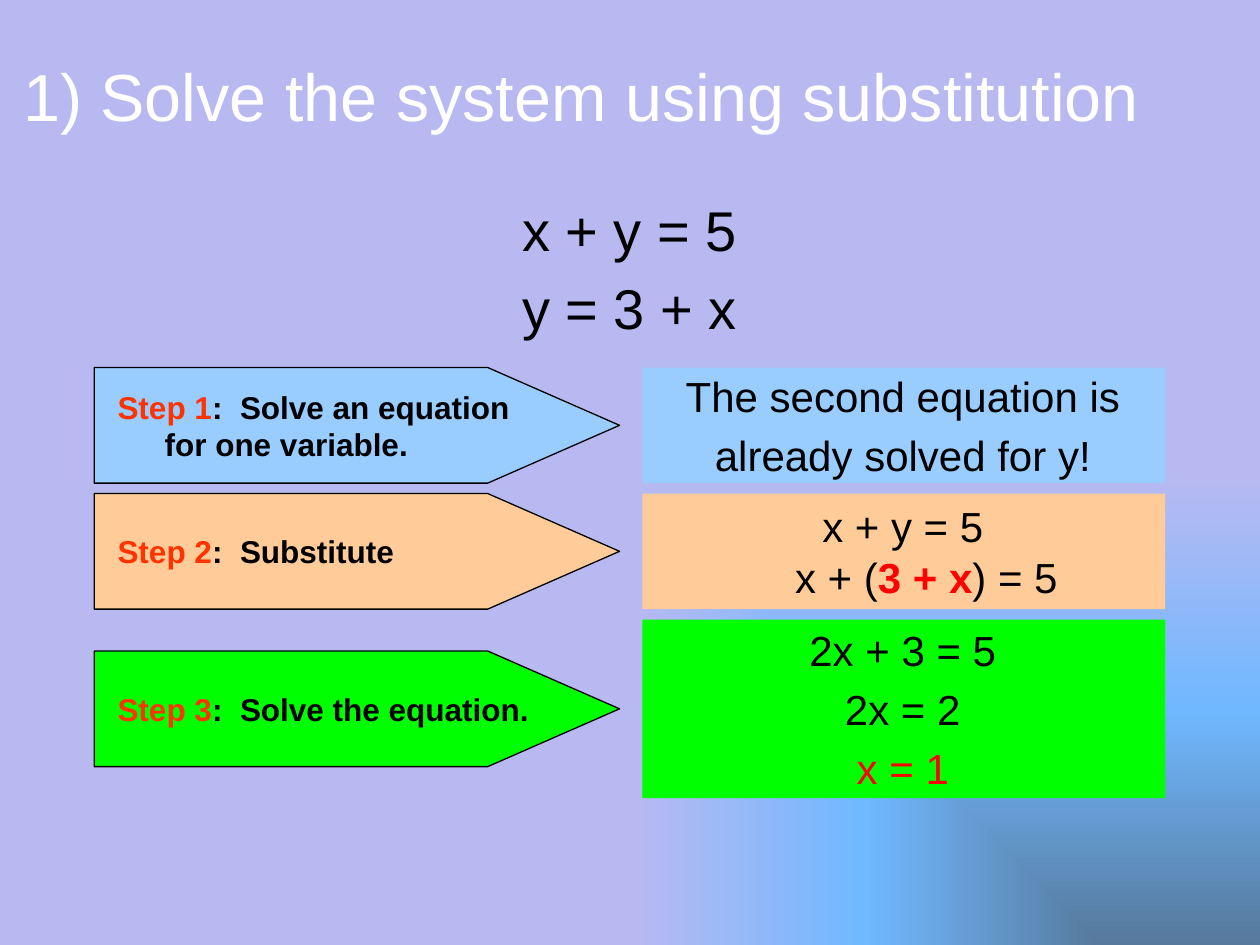
from pptx import Presentation
from pptx.dml.color import RGBColor
from pptx.enum.shapes import MSO_SHAPE
from pptx.enum.text import MSO_ANCHOR, PP_ALIGN
from pptx.oxml import parse_xml
from pptx.oxml.ns import nsdecls, qn
from pptx.util import Cm, Pt

WHITE = RGBColor(0xFF, 0xFF, 0xFF)
BLACK = RGBColor(0x00, 0x00, 0x00)
RED = RGBColor(0xFF, 0x00, 0x00)
ORANGE_RED = RGBColor(0xFF, 0x33, 0x00)
BLUE = RGBColor(0x99, 0xCC, 0xFF)
PEACH = RGBColor(0xFF, 0xCC, 0x99)
GREEN = RGBColor(0x00, 0xFF, 0x00)
BACKGROUND_STOPS = [
    (0, RGBColor(0x56, 0x79, 0x9C)),
    (50, RGBColor(0x70, 0xB8, 0xFF)),
    (100, RGBColor(0xB9, 0xB9, 0xF1)),
]

PENTAGON, RECTANGLE = MSO_SHAPE.PENTAGON, MSO_SHAPE.RECTANGLE
TOP, MIDDLE = MSO_ANCHOR.TOP, MSO_ANCHOR.MIDDLE
LEFT, CENTER = PP_ALIGN.LEFT, PP_ALIGN.CENTER

TITLE_ONLY = 5
HANGING = Cm(0.95)
ROW_TOP, ROW_PITCH, ROW_HEIGHT = 7.41, 2.54, 2.33
INSET = 0.21


class SlideBuilder:
    font = "Arial"

    def __init__(self, slide):
        self.slide = slide

    def background(self, stops):
        """Fill the background with a gradient spreading from the bottom right corner."""
        self.slide.background.fill.gradient()
        default = self.slide.element.find(".//" + qn("a:gradFill"))
        stop_xml = "".join(
            f'<a:gs pos="{percent * 1000}"><a:srgbClr val="{color}"/></a:gs>'
            for percent, color in stops
        )
        gradient = parse_xml(
            f'<a:gradFill {nsdecls("a")} rotWithShape="0"><a:gsLst>{stop_xml}</a:gsLst>'
            '<a:path path="rect"><a:fillToRect l="100000" t="100000"/></a:path></a:gradFill>'
        )
        default.getparent().replace(default, gradient)

    def add_run(self, paragraph, text, size, color=BLACK, bold=False):
        run = paragraph.add_run()
        run.text = text
        style = {"name": self.font, "size": Pt(size), "bold": bold}
        for attribute, value in style.items():
            setattr(run.font, attribute, value)
        run.font.color.rgb = color

    def title(self, text, left, top, width, height):
        title = self.slide.shapes.title
        place = {"left": left, "top": top, "width": width, "height": height}
        for attribute, value in place.items():
            setattr(title, attribute, Cm(value))
        title.text_frame.vertical_anchor = MIDDLE
        paragraph = title.text_frame.paragraphs[0]
        paragraph.alignment = LEFT
        self.add_run(paragraph, text, 38, WHITE)

    def panel(self, kind, left, top, width, height, color, outlined=False):
        panel = self.slide.shapes.add_shape(
            kind, Cm(left), Cm(top), Cm(width), Cm(height)
        )
        panel.shadow.inherit = False
        panel.fill.solid()
        panel.fill.fore_color.rgb = color
        if outlined:
            panel.line.color.rgb = BLACK
            panel.line.width = Pt(0.75)
        else:
            panel.line.fill.background()
        return panel

    def arrow(self, top, color):
        arrow = self.panel(PENTAGON, 1.9, top, 10.59, ROW_HEIGHT, color, outlined=True)
        arrow.adjustments[0] = 1.14

    def text(self, paragraphs, left, top, width, height, size, align=CENTER, anchor=MIDDLE):
        """Each paragraph is a list of (text, colour, bold) runs; None breaks the line."""
        box = self.slide.shapes.add_textbox(Cm(left), Cm(top), Cm(width), Cm(height))
        frame = box.text_frame
        frame.word_wrap = True
        frame.vertical_anchor = anchor
        for index, runs in enumerate(paragraphs):
            paragraph = frame.paragraphs[0] if index == 0 else frame.add_paragraph()
            paragraph.alignment = align
            self.format_paragraph(paragraph)
            for run in runs:
                if run is None:
                    paragraph.add_line_break()
                else:
                    self.add_run(paragraph, run[0], size, *run[1:])

    @staticmethod
    def format_paragraph(paragraph):
        """Set a hanging indent and a space before of 20 percent."""
        properties = paragraph._p.get_or_add_pPr()
        for attribute, value in {"marL": HANGING, "indent": -HANGING}.items():
            properties.set(attribute, str(int(value)))
        properties.append(parse_xml(
            f'<a:spcBef {nsdecls("a")}><a:spcPct val="20000"/></a:spcBef>'
        ))


def main():
    presentation = Presentation()
    presentation.slide_width, presentation.slide_height = Cm(25.4), Cm(19.05)
    slide = presentation.slides.add_slide(presentation.slide_layouts[TITLE_ONLY])
    builder = SlideBuilder(slide)

    builder.background(BACKGROUND_STOPS)
    builder.title("1) Solve the system using substitution", 0.21, 0.64, 23.07, 2.54)
    builder.text([[("x + y = 5",)], [("y = 3 + x",)]],
                 1.69, 3.81, 22.01, 12.9, size=32, anchor=TOP)

    # colour, instruction, working, height of the working
    steps = [
        (BLUE, "Solve an equation for one variable.",
         [[("The second equation is",)], [("already solved for y!",)]], ROW_HEIGHT),
        (PEACH, "Substitute",
         [[("x + y = 5",), None, ("x + (",), ("3 + x", RED, True), (") = 5",)]], ROW_HEIGHT),
        (GREEN, "Solve the equation.",
         [[("2x + 3 = 5",)], [("2x = 2",)], [("x = 1", RED)]], 3.6),
    ]
    for index, (color, instruction, working, height) in enumerate(steps):
        top = ROW_TOP + index * ROW_PITCH
        arrow_top = top + (height - ROW_HEIGHT) / 2
        builder.arrow(arrow_top, color)
        builder.panel(RECTANGLE, 12.95, top, 10.54, height, color)
        builder.text(
            [[(f"Step {index + 1}", ORANGE_RED, True), (f":  {instruction}", BLACK, True)]],
            2.12, arrow_top + INSET, 9.1, ROW_HEIGHT - 2 * INSET, size=18, align=LEFT)
        builder.text(working, 13.12, top + INSET, 10.16, height - 2 * INSET, size=24)

    presentation.save("out.pptx")


if __name__ == "__main__":
    main()
